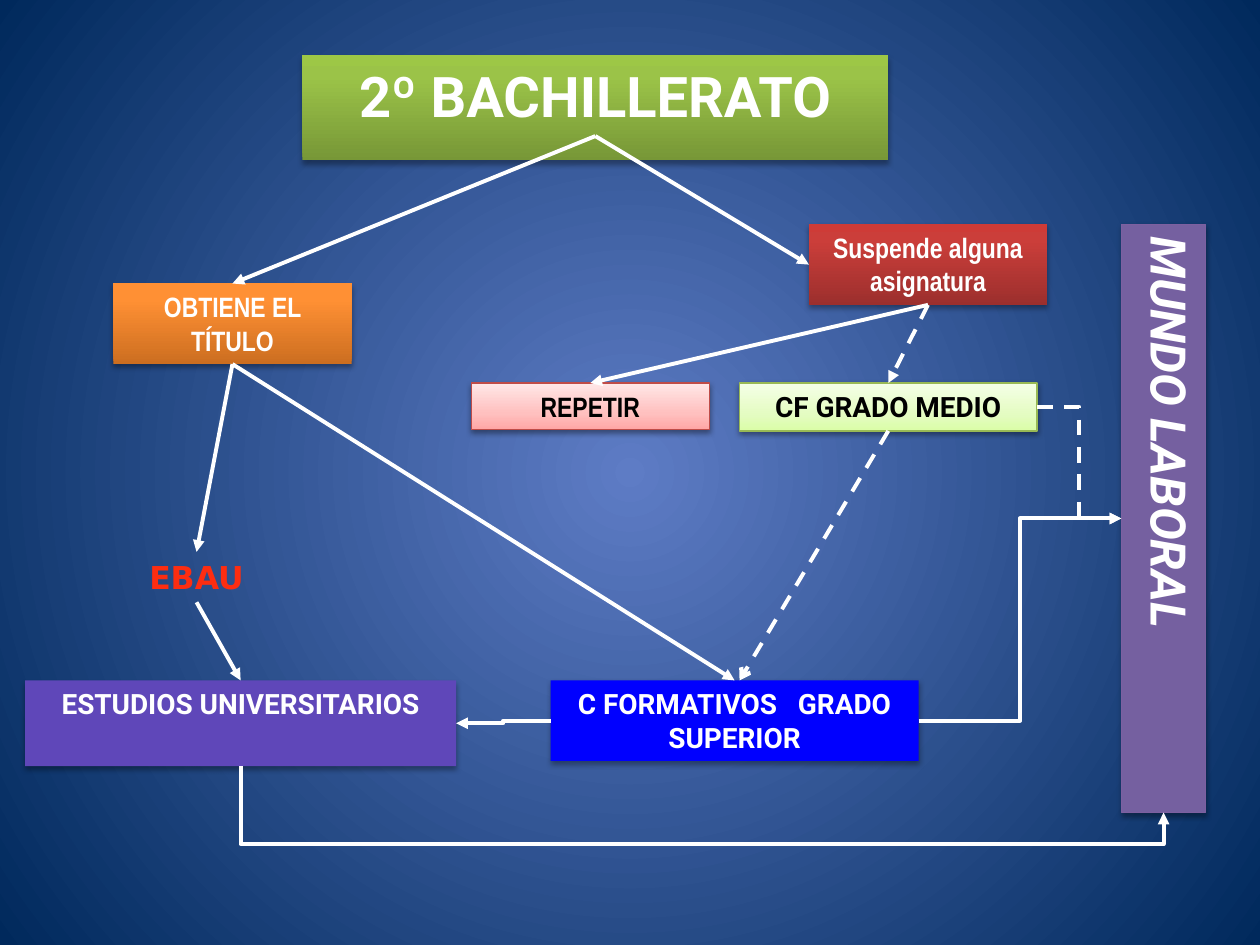
from dataclasses import dataclass
from typing import Optional

import pptx
import pptx.dml.color
import pptx.enum.dml
import pptx.enum.shapes
import pptx.enum.text
import pptx.oxml
import pptx.oxml.ns
import pptx.util
from pptx.util import Inches

TOP, LEFT, BASE, RIGHT = range(4)
Shape = pptx.enum.shapes.MSO_SHAPE
Link = pptx.enum.shapes.MSO_CONNECTOR
qn = pptx.oxml.ns.qn


@dataclass(frozen=True)
class Theme:
    white: str = "FFFFFF"
    black: str = "000000"
    red: str = "FD2D11"
    back: tuple = ((0, "5E7CC5"), (100, "00295C"))
    green: tuple = ((0, "779737"), (80, "9BC348"), (100, "9DC746"))
    lime: tuple = ((0, "DAFDA7"), (35, "E4FCC2"), (100, "F5FFE7"))
    brick: tuple = ((0, "9C2F2D"), (80, "CB3E3A"), (100, "CE3B37"))
    pink: tuple = ((0, "FFA6A5"), (35, "FFC0BF"), (100, "FFE7E7"))
    orange: tuple = ((0, "CC6E20"), (80, "FF9034"), (100, "FF9136"))
    violet: str = "5F47B9"
    blue: str = "0000FF"
    mauve: str = "7560A0"
    font: str = "Roboto"
    thin: str = "Arial Narrow"
    plain: str = "DejaVu Sans"
    head: int = 32
    side: int = 28
    note: int = 18
    body: int = 16
    stroke: float = 2.25
    edge: float = 0.75


T = Theme()


@dataclass(frozen=True)
class Box:
    text: str
    x: float
    y: float
    w: float
    h: float
    fill: object = None
    line: Optional[str] = None
    ink: str = T.white
    font: str = T.font
    size: int = T.body
    slant: bool = False
    turn: bool = False
    title: bool = False

    def mid(self, side: int) -> tuple:
        """Middle of a side, in inches."""
        return ((self.x + self.w / 2, self.y), (self.x, self.y + self.h / 2),
                (self.x + self.w / 2, self.y + self.h),
                (self.x + self.w, self.y + self.h / 2))[side]


@dataclass(frozen=True)
class Arrow:
    start: str
    out: int
    end: str
    into: int
    dash: bool = False
    bent: bool = False
    drop: float = 0
    shift: float = 0
    tip: str = "triangle"


BOXES = {
    "year": Box("2º BACHILLERATO", 2.4, 0.44, 4.65, 0.64, T.green, size=T.head, title=True),
    "middle": Box("CF GRADO MEDIO", 5.87, 3.04, 2.36, 0.38, T.lime, "98B955", T.black),
    "campus": Box("ESTUDIOS UNIVERSITARIOS", 0.2, 5.4, 3.42, 0.68, T.violet),
    "higher": Box("C FORMATIVOS   GRADO SUPERIOR", 4.37, 5.4, 2.92, 0.64, T.blue),
    "work": Box("MUNDO LABORAL", 8.9, 1.78, 0.67, 4.67, T.mauve, "7D60A0",
                size=T.side, slant=True, turn=True),
    "exam": Box("EBAU", 1.06, 4.38, 1, 0.4, ink=T.red, font=T.plain, size=T.note),
    "fail": Box("Suspende alguna asignatura", 6.42, 1.78, 1.89, 0.64, T.brick, font=T.thin),
    "repeat": Box("REPETIR", 3.74, 3.04, 1.89, 0.37, T.pink, "BF4C48", T.black, T.thin),
    "pass": Box("OBTIENE EL TÍTULO", 0.9, 2.25, 1.89, 0.64, T.orange, font=T.thin),
}

ARROWS = (
    Arrow("year", BASE, "pass", TOP),
    Arrow("year", BASE, "fail", LEFT),
    Arrow("pass", BASE, "exam", TOP),
    Arrow("pass", BASE, "higher", TOP),
    Arrow("exam", BASE, "campus", TOP),
    Arrow("fail", BASE, "repeat", TOP),
    Arrow("fail", BASE, "middle", TOP, dash=True),
    Arrow("middle", BASE, "higher", TOP, dash=True, shift=0.04, tip="arrow"),
    Arrow("higher", LEFT, "campus", RIGHT, bent=True),
    Arrow("middle", RIGHT, "work", LEFT, dash=True, bent=True),
    Arrow("higher", RIGHT, "work", LEFT, bent=True),
    Arrow("campus", BASE, "work", BASE, bent=True, drop=0.25),
)


def tint(code: str):
    return pptx.dml.color.RGBColor.from_string(code)


def node(tag: str, inner: str = "", **attrs):
    """Drawing element with the given attributes and inner markup."""
    names = "".join(f' {key}="{value}"' for key, value in attrs.items())
    return pptx.oxml.parse_xml(
        f"<a:{tag} {pptx.oxml.ns.nsdecls('a')}{names}>{inner}</a:{tag}>")


def blend(fill, root, stops: tuple, round_: bool = False) -> None:
    """Fill with the stops, from the base up or from the centre out."""
    fill.gradient()
    grad = root.find(".//" + qn("a:gradFill"))
    for child in list(grad):
        grad.remove(child)
    grad.append(node("gsLst", "".join(
        f'<a:gs pos="{pos * 1000}"><a:srgbClr val="{code}"/></a:gs>' for pos, code in stops)))
    if round_:
        grad.append(node("path", '<a:fillToRect l="50000" t="50000" r="50000" b="50000"/>',
                         path="circle"))
    else:
        grad.append(node("lin", ang=270 * 60000, scaled=0))


def write(shape, text: str, *, font: str, size: int, ink: str, slant: bool, turn: bool) -> None:
    frame = shape.text_frame
    frame.text = text
    frame.word_wrap = True
    frame.auto_size = pptx.enum.text.MSO_AUTO_SIZE.SHAPE_TO_FIT_TEXT
    frame.vertical_anchor = pptx.enum.text.MSO_ANCHOR.TOP
    if turn:
        shape._element.txBody.find(qn("a:bodyPr")).set("vert", "eaVert")
    para = frame.paragraphs[0]
    para.alignment = pptx.enum.text.PP_ALIGN.CENTER
    face = para.runs[0].font
    face.name, face.size, face.bold = font, pptx.util.Pt(size), True
    face.italic = slant
    face.color.rgb = tint(ink)


def shade(shape, soft: bool) -> None:
    shape.shadow.inherit = False
    alpha, gap = (38, 20000) if soft else (35, 23000)
    shape._element.spPr.find(qn("a:effectLst")).append(node(
        "outerShdw", f'<a:srgbClr val="{T.black}"><a:alpha val="{alpha * 1000}"/></a:srgbClr>',
        blurRad=40000, dist=gap, dir=90 * 60000, rotWithShape=0))


def draw_box(slide, box: Box):
    area = [Inches(n) for n in (box.x, box.y, box.w, box.h)]
    if box.title:
        shape = slide.shapes.title
        shape.left, shape.top, shape.width, shape.height = area
    elif box.fill:
        shape = slide.shapes.add_shape(Shape.RECTANGLE, *area)
    else:
        shape = slide.shapes.add_textbox(*area)
    write(shape, box.text, font=box.font, size=box.size, ink=box.ink,
          slant=box.slant, turn=box.turn)
    if not box.fill:
        return shape
    if isinstance(box.fill, str):
        shape.fill.solid()
        shape.fill.fore_color.rgb = tint(box.fill)
    else:
        blend(shape.fill, shape._element, box.fill)
    if box.line:
        shape.line.color.rgb = tint(box.line)
        shape.line.width = pptx.util.Pt(T.edge)
    else:
        shape.line.fill.background()
    shade(shape, soft=box.ink == T.black)
    return shape


def loop(line, start: tuple, end: tuple, drop: float) -> None:
    """Turn an elbow so that it runs below both of its ends."""
    wide, high = end[0] - start[0], end[1] - start[1]
    line.left = Inches((start[0] + end[0] - high) / 2)
    line.top = Inches((start[1] + end[1] - wide) / 2)
    line.width, line.height = Inches(high), Inches(wide)
    frame = line._element.spPr.find(qn("a:xfrm"))
    frame.set("rot", str(270 * 60000))
    frame.set("flipH", "1")
    ratio = round((high + drop) / high * 100000)
    line._element.spPr.find(qn("a:prstGeom")).find(qn("a:avLst")).append(
        node("gd", name="adj1", fmla=f"val {ratio}"))


def draw_arrow(slide, arrow: Arrow, shapes: dict) -> None:
    start = BOXES[arrow.start].mid(arrow.out)
    x, y = BOXES[arrow.end].mid(arrow.into)
    end = (x + arrow.shift, y)
    kind = Link.ELBOW if arrow.bent else Link.STRAIGHT
    line = slide.shapes.add_connector(kind, *(Inches(n) for n in start + end))
    if not arrow.bent:
        line.begin_connect(shapes[arrow.start], arrow.out)
        if not arrow.shift:
            line.end_connect(shapes[arrow.end], arrow.into)
    if arrow.drop:
        loop(line, start, end, arrow.drop)
    line.line.color.rgb = tint(T.white)
    line.line.width = pptx.util.Pt(T.stroke)
    if arrow.dash:
        line.line.dash_style = pptx.enum.dml.MSO_LINE.DASH
    props = line._element.spPr
    props.find(qn("a:ln")).append(node("tailEnd", type=arrow.tip))
    props.append(node("effectLst"))


def main() -> None:
    deck = pptx.Presentation()
    deck.slide_width, deck.slide_height = Inches(10), Inches(7.5)
    slide = deck.slides.add_slide(deck.slide_layouts[5])
    blend(slide.background.fill, slide._element, T.back, round_=True)
    shapes = {name: draw_box(slide, box) for name, box in BOXES.items()}
    for arrow in ARROWS:
        draw_arrow(slide, arrow, shapes)
    deck.save("out.pptx")


if __name__ == "__main__":
    main()
